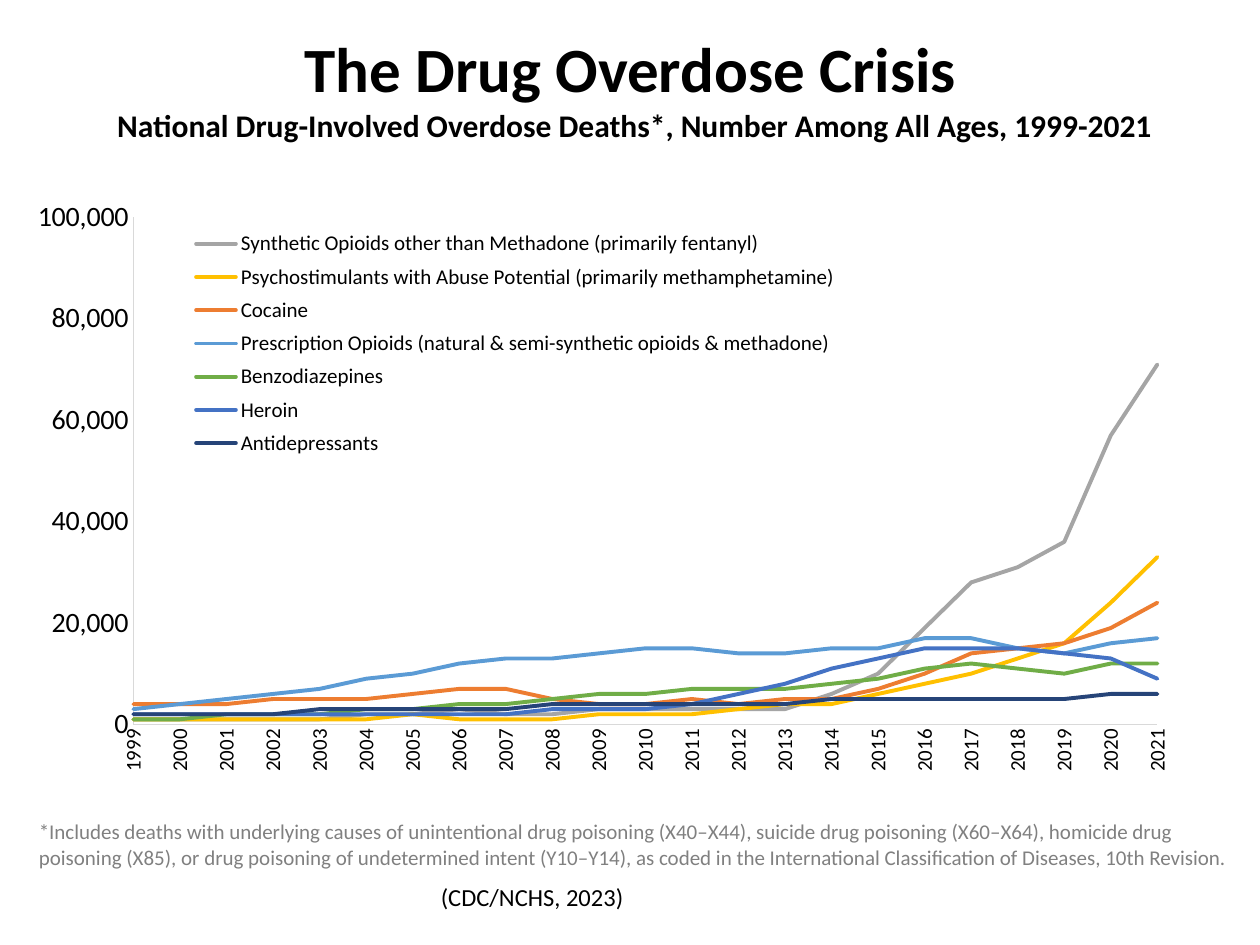
from lxml import etree
from pptx import Presentation
from pptx import util as u
from pptx.chart.data import CategoryChartData
from pptx.dml.color import RGBColor
from pptx.enum import chart as charts, text
from pptx.oxml.ns import qn

COLORS = {
    "black": "000000", "note": "808080", "axis": "D9D9D9",
    "gray": "A5A5A5", "gold": "FFC000", "orange": "ED7D31", "sky": "5B9BD5",
    "green": "70AD47", "blue": "4472C4", "navy": "264478",
}

# Deaths in thousands for each year: name, colour, values
YEARS = range(1999, 2022)
DEATHS = [
    ("Synthetic Opioids other than Methadone (primarily fentanyl)", "gray",
     [1, 1, 1, 1, 1, 2, 2, 3, 2, 2, 3, 3, 3, 3, 3, 6, 10, 19, 28, 31, 36, 57, 71]),
    ("Psychostimulants with Abuse Potential (primarily methamphetamine)", "gold",
     [1, 1, 1, 1, 1, 1, 2, 1, 1, 1, 2, 2, 2, 3, 4, 4, 6, 8, 10, 13, 16, 24, 33]),
    ("Cocaine", "orange",
     [4, 4, 4, 5, 5, 5, 6, 7, 7, 5, 4, 4, 5, 4, 5, 5, 7, 10, 14, 15, 16, 19, 24]),
    ("Prescription Opioids (natural & semi-synthetic opioids & methadone)", "sky",
     [3, 4, 5, 6, 7, 9, 10, 12, 13, 13, 14, 15, 15, 14, 14, 15, 15, 17, 17, 15, 14, 16, 17]),
    ("Benzodiazepines", "green",
     [1, 1, 2, 2, 2, 3, 3, 4, 4, 5, 6, 6, 7, 7, 7, 8, 9, 11, 12, 11, 10, 12, 12]),
    ("Heroin", "blue",
     [2, 2, 2, 2, 2, 2, 2, 2, 2, 3, 3, 3, 4, 6, 8, 11, 13, 15, 15, 15, 14, 13, 9]),
    ("Antidepressants", "navy",
     [2, 2, 2, 2, 3, 3, 3, 3, 3, 4, 4, 4, 4, 4, 4, 5, 5, 5, 5, 5, 5, 6, 6]),
]


def manual_layout(x, y, w, h, inner=False):
    """Chart layout element, in fractions of the chart area."""
    layout = etree.Element(qn("c:layout"))
    manual = etree.SubElement(layout, qn("c:manualLayout"))
    settings = [("layoutTarget", "inner")] if inner else []
    settings += [("xMode", "edge"), ("yMode", "edge"),
                 ("x", x), ("y", y), ("w", w), ("h", h)]
    for tag, value in settings:
        etree.SubElement(manual, qn(f"c:{tag}")).set("val", str(value))
    return layout


def remove_children(parent, tag):
    for child in parent.findall(qn(tag)):
        parent.remove(child)


class SlideBuilder:
    font_name = "Calibri"

    def __init__(self, slide):
        self.slide = slide

    def style(self, font, size, color="black", bold=False):
        font.name = self.font_name
        font.size = u.Pt(size)
        font.bold = bold
        font.color.rgb = RGBColor.from_string(COLORS[color])

    def fill_text(self, frame, words, size, color, bold, align, anchor):
        frame.text = words
        frame.vertical_anchor = anchor
        frame.paragraphs[0].alignment = align
        self.style(frame.paragraphs[0].runs[0].font, size, color, bold)

    def title(self, words, box, size):
        heading = self.slide.shapes.title
        heading.left, heading.top, heading.width, heading.height = map(u.Pt, box)
        heading.text_frame.auto_size = text.MSO_AUTO_SIZE.NONE
        self.fill_text(heading.text_frame, words, size, "black", True,
                       text.PP_ALIGN.CENTER, text.MSO_ANCHOR.BOTTOM)
        heading.text_frame.paragraphs[0].line_spacing = 0.9

    def text(self, words, box, size, color="black", bold=False, wrap=True,
             align=text.PP_ALIGN.LEFT, anchor=text.MSO_ANCHOR.TOP):
        frame = self.slide.shapes.add_textbox(*map(u.Pt, box)).text_frame
        frame.word_wrap = wrap
        self.fill_text(frame, words, size, color, bold, align, anchor)

    def line(self, line, color, width):
        line.color.rgb = RGBColor.from_string(COLORS[color])
        line.width = u.Pt(width)

    def axis(self, axis, size):
        axis.has_major_gridlines = False
        axis.major_tick_mark = axis.minor_tick_mark = charts.XL_TICK_MARK.NONE
        axis.tick_labels.number_format = "#,##0"
        axis.tick_labels.number_format_is_linked = False
        self.style(axis.tick_labels.font, size)
        self.line(axis.format.line, "axis", 0.75)

    def line_chart(self, box):
        data = CategoryChartData(number_format="#,##0")
        data.categories = [str(year) for year in YEARS]
        for name, _, thousands in DEATHS:
            data.add_series(name, [1000 * value for value in thousands])
        chart = self.slide.shapes.add_chart(
            charts.XL_CHART_TYPE.LINE, *map(u.Pt, box), data).chart
        chart.has_title = False
        self.style(chart.font, 16)

        # Series lines
        for series, (_, color, _) in zip(chart.plots[0].series, DEATHS):
            series.smooth = False
            self.line(series.format.line, color, 2.25)
            for stroke in series._element.iter(qn("a:ln")):
                stroke.set("cap", "rnd")

        # Axes: upright years, lines starting on the value axis
        years, deaths = chart.category_axis, chart.value_axis
        self.axis(years, 12)
        self.axis(deaths, 16)
        years_body = years._element.find(qn("c:txPr")).find(qn("a:bodyPr"))
        years_body.set("rot", "-5400000")
        years_body.set("vert", "horz")
        deaths.minimum_scale, deaths.maximum_scale = 0, 100000
        deaths.major_unit = 20000
        remove_children(deaths._element, "c:crossBetween")
        crossing = etree.Element(qn("c:crossBetween"))
        crossing.set("val", "midCat")
        deaths._element.find(qn("c:crosses")).addnext(crossing)

        # Plot area and the legend inside it
        plot_area = chart._chartSpace.chart.plotArea
        remove_children(plot_area, "c:layout")
        plot_area.insert(0, manual_layout(0.091, 0.026, 0.871, 0.821, inner=True))
        chart.has_legend = True
        legend = chart.legend
        legend.position = charts.XL_LEGEND_POSITION.RIGHT
        legend.include_in_layout = True
        self.style(legend.font, 12)
        remove_children(legend._element, "c:layout")
        legend._element.find(qn("c:legendPos")).addnext(
            manual_layout(0.136, 0.035, 0.56, 0.39))


def main():
    deck = Presentation()
    deck.slide_width, deck.slide_height = u.Pt(720), u.Pt(540)
    builder = SlideBuilder(deck.slides.add_slide(deck.slide_layouts[5]))
    left = 15.1

    # Heading
    builder.title("The Drug Overdose Crisis", (left, 10.1, 690.5, 54), 36)

    # Deaths by drug
    builder.line_chart((left, 114.5, 671.8, 353.5))

    # Footnote
    builder.text(
        "*Includes deaths with underlying causes of unintentional drug poisoning "
        "(X40–X44), suicide drug poisoning (X60–X64), homicide drug poisoning (X85), "
        "or drug poisoning of undetermined intent (Y10–Y14), as coded in the "
        "International Classification of Diseases, 10th Revision.",
        (left, 464.4, 695.5, 36), 12, "note")

    # Subtitle
    builder.text(
        "National Drug-Involved Overdose Deaths*, Number Among All Ages, 1999-2021",
        (left, 53.3, 695.5, 36), 18, bold=True,
        align=text.PP_ALIGN.CENTER, anchor=text.MSO_ANCHOR.MIDDLE)

    # Citation
    builder.text("(CDC/NCHS, 2023)", (244.8, 500.4, 119.5, 24.5), 14, wrap=False)

    deck.save("out.pptx")


if __name__ == "__main__":
    main()
